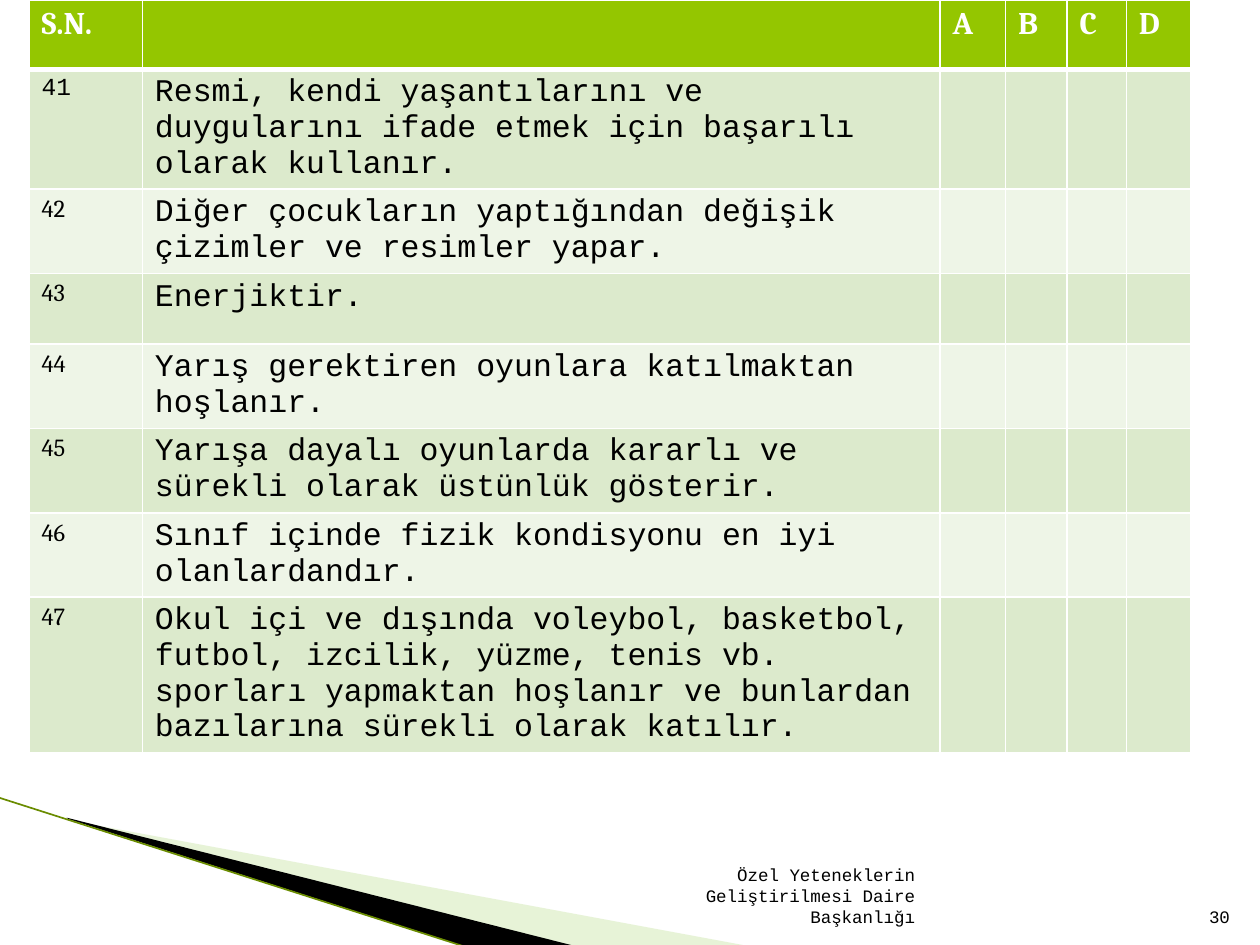
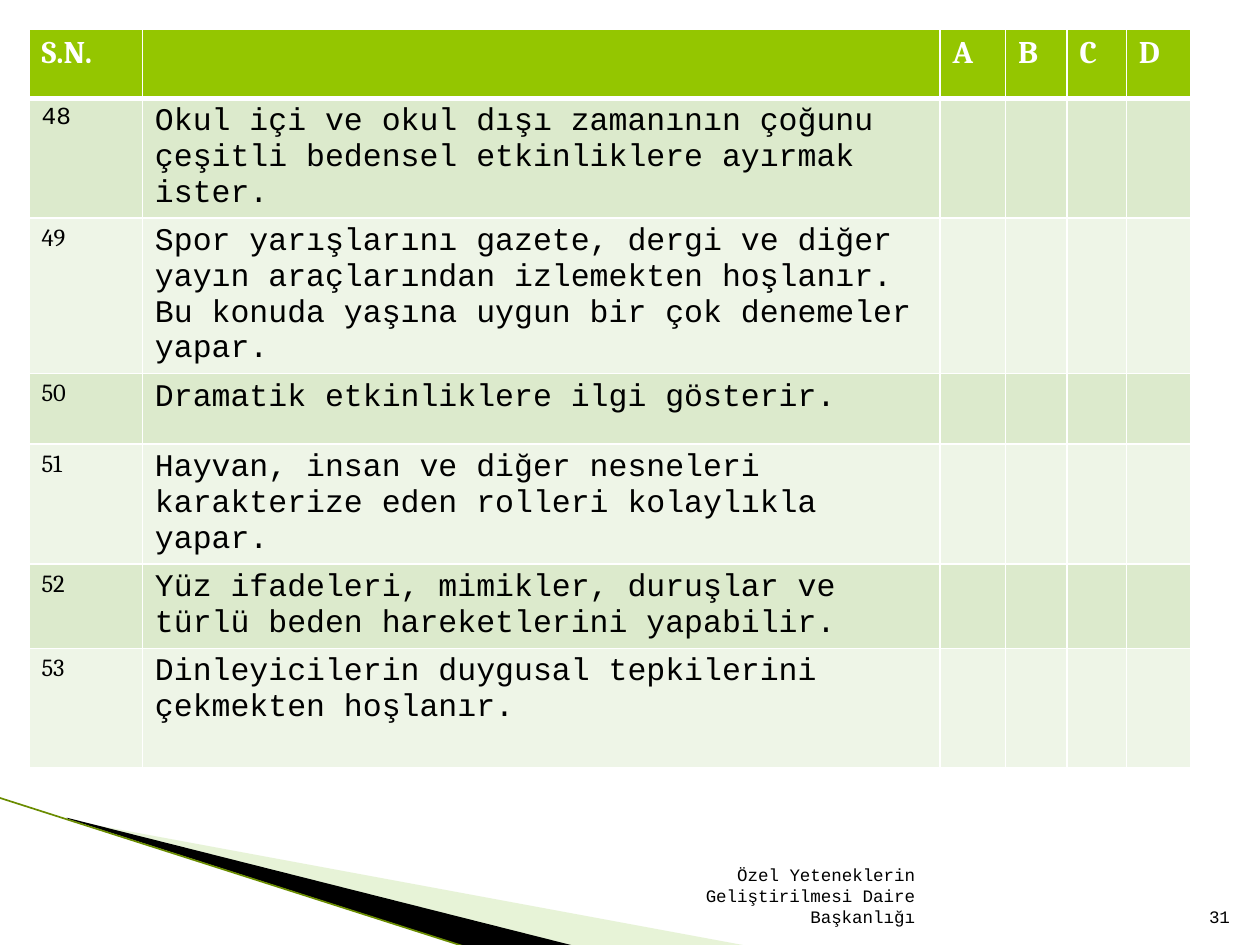
import lxml.etree
import pptx
import pptx.dml.color
import pptx.enum.shapes
import pptx.enum.text
import pptx.oxml.ns
import pptx.util

Inches, Pt = pptx.util.Inches, pptx.util.Pt
qn = pptx.oxml.ns.qn

COLORS = {
    "header": "94C600",
    "odd_row": "DCEACC",
    "even_row": "EEF5E7",
    "white": "FFFFFF",
    "black": "000000",
    "pale_band": "C3E19D",
    "band_edge": "6A8C00",
}
SERIF, MONO = "Cambria", "Courier New"
FOOTER = "Özel Yeteneklerin Geliştirilmesi Daire Başkanlığı"
HEADINGS = ["S.N.", "", "A", "B", "C", "D"]
COLUMN_WIDTHS = [0.9, 6.33, 0.52, 0.49, 0.47, 0.51]
HEADER_HEIGHT = 0.55

# Corner points, fill and opacity in percent
BANDS = [
    ([(0.55, 6.51), (5.95, 7.51), (4.56, 7.51), (0.55, 6.5)], "pale_band", 40),
    ([(0.53, 6.49), (4.57, 7.51), (3.72, 7.52), (0.54, 6.5)], "black", 100),
]

# Each statement comes with the height of its row
CHECKLISTS = [
    {"page_number": 30, "top": 0, "first_item": 41, "items": [
        ("Resmi, kendi yaşantılarını ve duygularını ifade etmek için başarılı "
         "olarak kullanır.", 0.95),
        ("Diğer çocukların yaptığından değişik çizimler ve resimler yapar.", 0.67),
        ("Enerjiktir.", 0.56),
        ("Yarış gerektiren oyunlara katılmaktan hoşlanır.", 0.67),
        ("Yarışa dayalı oyunlarda kararlı ve sürekli olarak üstünlük gösterir.", 0.67),
        ("Sınıf içinde fizik kondisyonu en iyi olanlardandır.", 0.67),
        ("Okul içi ve dışında voleybol, basketbol, futbol, izcilik, yüzme, tenis vb. "
         "sporları yapmaktan hoşlanır ve bunlardan bazılarına sürekli olarak katılır.", 1.23),
    ]},
    {"page_number": 31, "top": 0.23, "first_item": 48, "items": [
        ("Okul içi ve okul dışı zamanının çoğunu çeşitli bedensel etkinliklere "
         "ayırmak ister.", 0.95),
        ("Spor yarışlarını gazete, dergi ve diğer yayın araçlarından izlemekten "
         "hoşlanır. Bu konuda yaşına uygun bir çok denemeler yapar.", 1.23),
        ("Dramatik etkinliklere ilgi gösterir.", 0.56),
        ("Hayvan, insan ve diğer nesneleri karakterize eden rolleri kolaylıkla "
         "yapar.", 0.95),
        ("Yüz ifadeleri, mimikler, duruşlar ve türlü beden hareketlerini "
         "yapabilir.", 0.67),
        ("Dinleyicilerin duygusal tepkilerini çekmekten hoşlanır.", 0.95),
    ]},
]


def rgb(name):
    return pptx.dml.color.RGBColor.from_string(COLORS[name])


def write(para, text, font_name, size, color="black", bold=False):
    para.text = text
    para.font.name = font_name
    para.font.size = Pt(size)
    para.font.bold = bold
    para.font.color.rgb = rgb(color)


deck = pptx.Presentation()
deck.slide_width, deck.slide_height = Inches(10), Inches(7.5)

for checklist in CHECKLISTS:
    page = deck.slides.add_slide(deck.slide_layouts[6])

    # Corner bands
    for corners, color, opacity in BANDS:
        points = [(Inches(x), Inches(y)) for x, y in corners]
        builder = page.shapes.build_freeform(*points[0])
        builder.add_line_segments(points[1:], close=True)
        band = builder.convert_to_shape()
        band.shadow.inherit = False
        band.line.fill.background()
        band.fill.solid()
        band.fill.fore_color.rgb = rgb(color)
        if opacity < 100:
            fill_color = band._element.spPr.find(f".//{qn('a:srgbClr')}")
            lxml.etree.SubElement(fill_color, qn("a:alpha"), val=str(opacity * 1000))
    edge = page.shapes.add_connector(
        pptx.enum.shapes.MSO_CONNECTOR.STRAIGHT,
        Inches(-0.01), Inches(6.33), Inches(3.71), Inches(7.52))
    edge.line.color.rgb = rgb("band_edge")
    edge.line.width = Pt(0.95)
    lxml.etree.SubElement(edge._element.spPr, qn("a:effectLst"))

    # Checklist table
    items = checklist["items"]
    rows = [HEADINGS] + [
        [str(number), statement, "", "", "", ""]
        for number, (statement, _) in enumerate(items, checklist["first_item"])
    ]
    heights = [HEADER_HEIGHT] + [height for _, height in items]
    table = page.shapes.add_table(
        len(rows), len(HEADINGS), Inches(0.23), Inches(checklist["top"]),
        Inches(sum(COLUMN_WIDTHS)), Inches(sum(heights))).table
    for column, width in zip(table.columns, COLUMN_WIDTHS):
        column.width = Inches(width)
    for r, (texts, height) in enumerate(zip(rows, heights)):
        table.rows[r].height = Inches(height)
        for c, text in enumerate(texts):
            cell = table.cell(r, c)
            para = cell.text_frame.paragraphs[0]
            if r == 0:
                fill = "header"
                write(para, text, SERIF, 18, "white", bold=True)
            else:
                fill = "odd_row" if r % 2 else "even_row"
                # Only the first item number is set in the monospaced face
                is_serif = c == 0 and r > 1
                write(para, text, SERIF if is_serif else MONO, 14 if c == 0 else 18)
            borders = {"a:lnL": 1, "a:lnR": 1,
                       "a:lnT": 3 if r == 1 else 1, "a:lnB": 3 if r == 0 else 1}
            properties = cell._tc.get_or_add_tcPr()
            for tag, points in borders.items():
                border = lxml.etree.SubElement(properties, qn(tag), w=str(Pt(points)))
                paint = lxml.etree.SubElement(border, qn("a:solidFill"))
                lxml.etree.SubElement(paint, qn("a:srgbClr"), val=COLORS["white"])
            cell.fill.solid()
            cell.fill.fore_color.rgb = rgb(fill)

    # Footer and page number
    for text, left, width in [(FOOTER, 4.79, 2.57),
                              (str(checklist["page_number"]), 9.46, 0.4)]:
        box = page.shapes.add_textbox(
            Inches(left), Inches(7.01), Inches(width), Inches(0.4))
        box.text_frame.word_wrap = True
        box.text_frame.vertical_anchor = pptx.enum.text.MSO_ANCHOR.BOTTOM
        para = box.text_frame.paragraphs[0]
        para.alignment = pptx.enum.text.PP_ALIGN.RIGHT
        write(para, text, MONO, 10)

deck.save("out.pptx")
